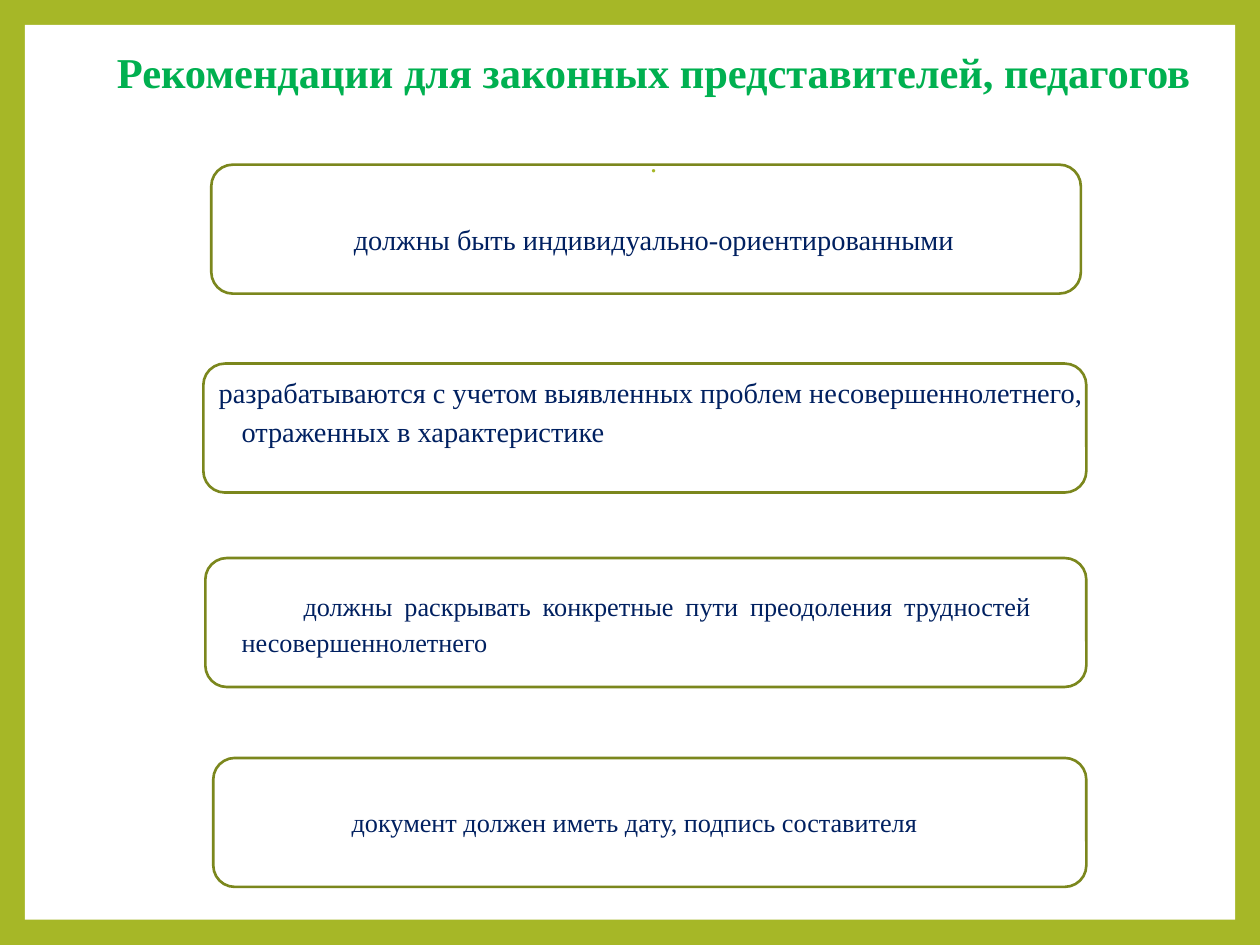
from pptx import Presentation
from pptx.dml.color import RGBColor
from pptx.enum.shapes import MSO_SHAPE
from pptx.enum.text import MSO_ANCHOR, PP_ALIGN
from pptx.util import Cm, Pt

FONT = "Times New Roman"
LIME, OLIVE, GREEN, NAVY, WHITE = "A6B727", "7B871D", "00B050", "002060", "FFFFFF"
CENTER_X = 13.18

# Left, top and width of each frame, in cm
FRAME_HEIGHT = 2.6
FRAMES = [(4.26, 3.32, 17.53), (4.1, 7.33, 17.8), (4.14, 11.25, 17.76), (4.3, 15.28, 17.6)]


def color(value):
    return RGBColor.from_string(value)


def add_panel(slide):
    panel = slide.shapes.add_shape(MSO_SHAPE.RECTANGLE, Cm(0.5), Cm(0.5), Cm(24.4), Cm(18.04))
    panel.shadow.inherit = False
    panel.fill.solid()
    panel.fill.fore_color.rgb = color(WHITE)
    panel.line.fill.background()


def add_frame(slide, left, top, width):
    frame = slide.shapes.add_shape(
        MSO_SHAPE.ROUNDED_RECTANGLE, Cm(left), Cm(top), Cm(width), Cm(FRAME_HEIGHT))
    frame.shadow.inherit = False
    frame.fill.background()
    frame.line.color.rgb = color(OLIVE)
    frame.line.width = Pt(1.5)


def add_text(slide, text, left, top, width, height, size, text_color=NAVY,
             align=PP_ALIGN.JUSTIFY, anchor=MSO_ANCHOR.TOP, bold=False,
             spacing=1.0, margin=0.0, indent=0.0, before=0):
    box = slide.shapes.add_textbox(Cm(left), Cm(top), Cm(width), Cm(height))
    frame = box.text_frame
    frame.word_wrap = True
    frame.vertical_anchor = anchor
    frame.text = text
    paragraph = frame.paragraphs[0]
    paragraph.alignment = align
    paragraph.line_spacing = spacing
    paragraph.space_before = Pt(before)
    properties = paragraph._p.get_or_add_pPr()
    properties.set("marL", str(Cm(margin)))
    properties.set("indent", str(Cm(indent)))
    for run in paragraph.runs:
        run.font.name = FONT
        run.font.size = Pt(size)
        run.font.bold = bold
        run.font.color.rgb = color(text_color)


def add_centered_line(slide, text, center_y, width, size, text_color=NAVY, bold=False):
    height = 1.2
    add_text(slide, text, CENTER_X - width / 2, center_y - height / 2, width, height, size,
             text_color, PP_ALIGN.CENTER, MSO_ANCHOR.MIDDLE, bold)


def main():
    presentation = Presentation()
    presentation.slide_width, presentation.slide_height = Cm(25.4), Cm(19.05)
    slide = presentation.slides.add_slide(presentation.slide_layouts[6])

    # Lime border around a white panel
    slide.background.fill.solid()
    slide.background.fill.fore_color.rgb = color(LIME)
    add_panel(slide)

    # Title and centred lines
    add_centered_line(slide, "Рекомендации для законных представителей, педагогов",
                      1.45, 23.4, 24.3, GREEN, bold=True)
    add_centered_line(slide, ".", 3.25, 2, 16.2, LIME)
    add_centered_line(slide, "должны быть индивидуально-ориентированными", 4.83, 16, 16.2)

    # Recommendation frames
    for left, top, width in FRAMES:
        add_frame(slide, left, top, width)

    # Recommendations set from the left
    add_text(slide, "разрабатываются с учетом выявленных проблем несовершеннолетнего,\v"
             "отраженных в характеристике", 4.16, 7.24, 18.4, 2, 16.2,
             align=PP_ALIGN.LEFT, anchor=MSO_ANCHOR.MIDDLE,
             spacing=1.15, margin=0.46, indent=-0.46)
    add_text(slide, "должны раскрывать конкретные пути преодоления трудностей несовершеннолетнего",
             4.62, 11.68, 16.41, 1.73, 15, spacing=1.15, indent=1.25, before=5)
    add_text(slide, "документ должен иметь дату, подпись составителя",
             5.59, 16.13, 15.39, 0.89, 15, indent=1.25)

    presentation.save("out.pptx")


if __name__ == "__main__":
    main()
